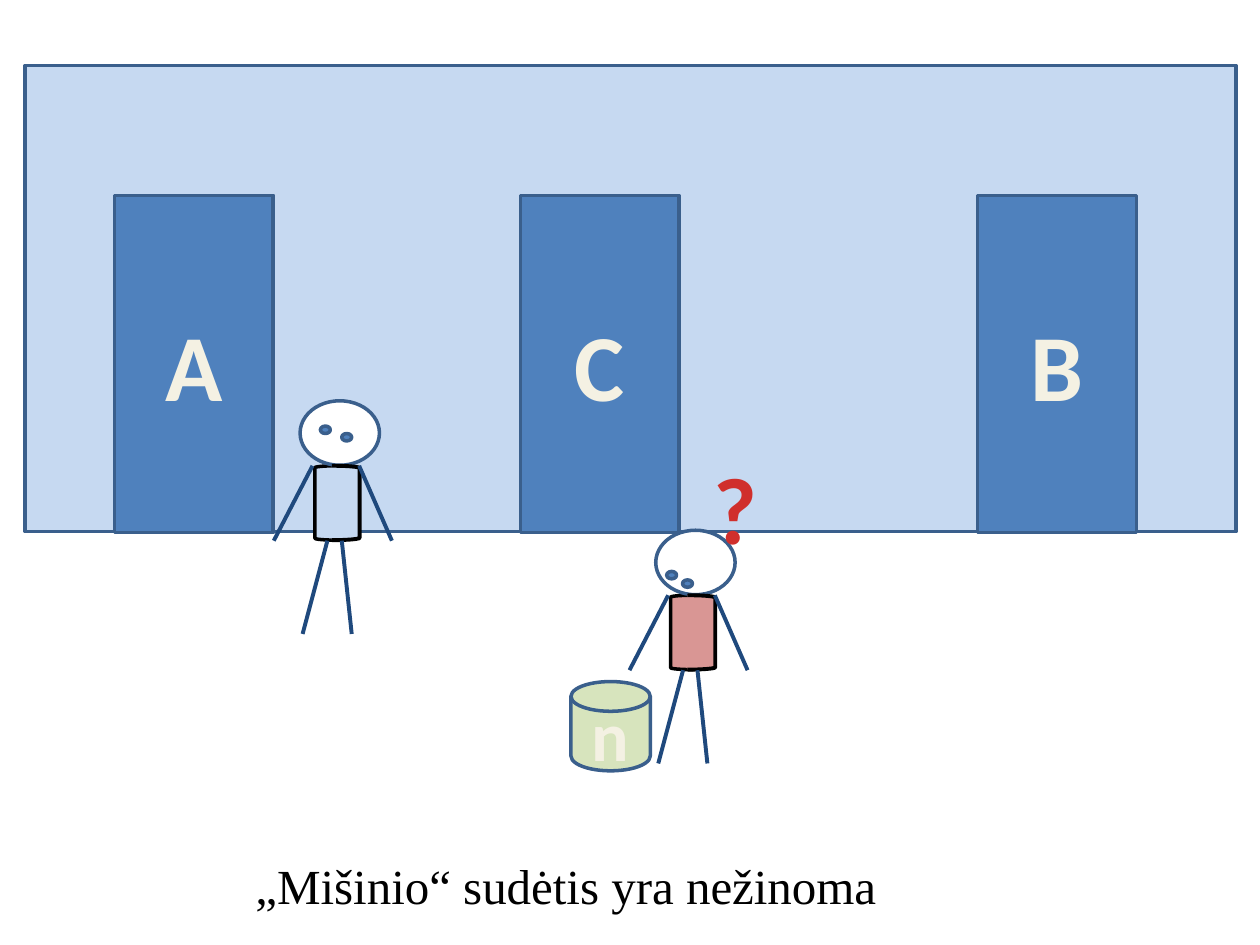
from lxml import etree
from pptx import Presentation
from pptx import util as u
from pptx.dml.color import RGBColor
from pptx.enum import shapes, text
from pptx.oxml import ns

SHAPE = shapes.MSO_SHAPE


def rgb(value):
    """Turn a hex string into a colour."""
    return RGBColor.from_string(value)


class Scene:
    """Draws doors, figures and labels on one slide in a shared style."""

    BLUE, EDGE, LIMB = "4F81BD", "3A5F8C", "1F497D"
    WALL, CREAM, OUTLINE = "C6D9F1", "F4F1E3", "054697"

    def __init__(self, prs):
        self.s = prs.slides.add_slide(prs.slide_layouts[6])

    def shape(self, kind, x, y, w, h, fill, line=EDGE, width=2, parent=None):
        sp = (parent or self.s).shapes.add_shape(kind, u.Cm(x), u.Cm(y), u.Cm(w), u.Cm(h))
        sp.shadow.inherit = False
        sp.fill.solid()
        sp.fill.fore_color.rgb = rgb(fill)
        sp.line.color.rgb = rgb(line)
        sp.line.width = u.Pt(width)
        return sp

    def limb(self, parent, x1, y1, x2, y2):
        c = parent.shapes.add_connector(shapes.MSO_CONNECTOR.STRAIGHT,
                                        u.Cm(x1), u.Cm(y1), u.Cm(x2), u.Cm(y2))
        c.line.color.rgb = rgb(self.LIMB)
        c.line.width = u.Pt(2.25)
        etree.SubElement(c._element.spPr, ns.qn("a:effectLst"))

    def add_text(self, sp, words, size, color, bold=True, font="Calibri",
                 align=text.PP_ALIGN.CENTER):
        p = sp.text_frame.paragraphs[0]
        p.alignment = align
        r = p.add_run()
        r.text = words
        r.font.name, r.font.size, r.font.bold = font, u.Pt(size), bold
        r.font.color.rgb = rgb(color)
        return r

    def letter(self, sp, words, size):
        sp.text_frame.vertical_anchor = text.MSO_ANCHOR.MIDDLE
        r = self.add_text(sp, words, size, self.CREAM)
        ln = etree.Element(ns.qn("a:ln"), w=str(u.Pt(1)))
        fill = etree.SubElement(ln, ns.qn("a:solidFill"))
        etree.SubElement(fill, ns.qn("a:srgbClr"), val=self.OUTLINE)
        r._r.get_or_add_rPr().insert(0, ln)

    def label(self, x, y, w, h, words, size, color, wrap=True, **style):
        sp = self.s.shapes.add_textbox(u.Cm(x), u.Cm(y), u.Cm(w), u.Cm(h))
        tf = sp.text_frame
        tf.word_wrap = wrap
        tf.auto_size = text.MSO_AUTO_SIZE.SHAPE_TO_FIT_TEXT
        self.add_text(sp, words, size, color, **style)

    def door(self, x, name):
        self.letter(self.shape(SHAPE.RECTANGLE, x, 3.94, 3.2, 6.8, self.BLUE), name, 54)

    def figure(self, x, y, fill, eyes):
        g = self.s.shapes.add_group_shape()
        neck, hip, foot = y + 1.31, y + 2.82, y + 4.7
        self.shape(SHAPE.LEFT_BRACKET, x + 0.3, neck, 0.46, 1.5, fill, "000000", parent=g)
        self.shape(SHAPE.OVAL, x, y, 1.6, 1.3, "FFFFFF", parent=g)
        for dx, dy in eyes:
            self.shape(SHAPE.OVAL, x + dx, y + dy, 0.2, 0.15, self.BLUE, parent=g)
        self.shape(SHAPE.RIGHT_BRACKET, x + 0.64, neck, 0.56, 1.5, fill, "000000", 2.25, g)
        for start, top, end, bottom in ((0.84, hip, 1.04, foot), (1.19, neck, 1.85, hip),
                                        (0.55, hip, 0.05, foot), (0.25, neck, -0.53, hip)):
            self.limb(g, x + start, top, x + end, bottom)


def main():
    prs = Presentation()
    prs.slide_width, prs.slide_height = u.Cm(25.4), u.Cm(19.05)
    scene = Scene(prs)
    scene.shape(SHAPE.RECTANGLE, 0.51, 1.32, 24.41, 9.4, scene.WALL)
    for x, name in ((2.31, "A"), (19.71, "B"), (10.49, "C")):
        scene.door(x, name)
    bucket = scene.shape(SHAPE.FLOWCHART_MAGNETIC_DISK, 11.51, 13.74, 1.6, 1.8, "D7E4BD")
    scene.letter(bucket, "n", 40)
    scene.figure(6.05, 8.08, scene.WALL, ((0.41, 0.51), (0.84, 0.66)))
    scene.figure(13.22, 10.69, "D99694", ((0.22, 0.83), (0.54, 1.0)))
    scene.label(14.12, 8.94, 1.4, 2.57, "?", 54, "D02F2C", wrap=False)
    scene.label(4.9, 17.12, 19.79, 1.45, "„Mišinio“ sudėtis yra nežinoma", 28, "000000",
                bold=False, font="Times New Roman", align=text.PP_ALIGN.LEFT)
    prs.save("out.pptx")


if __name__ == "__main__":
    main()
